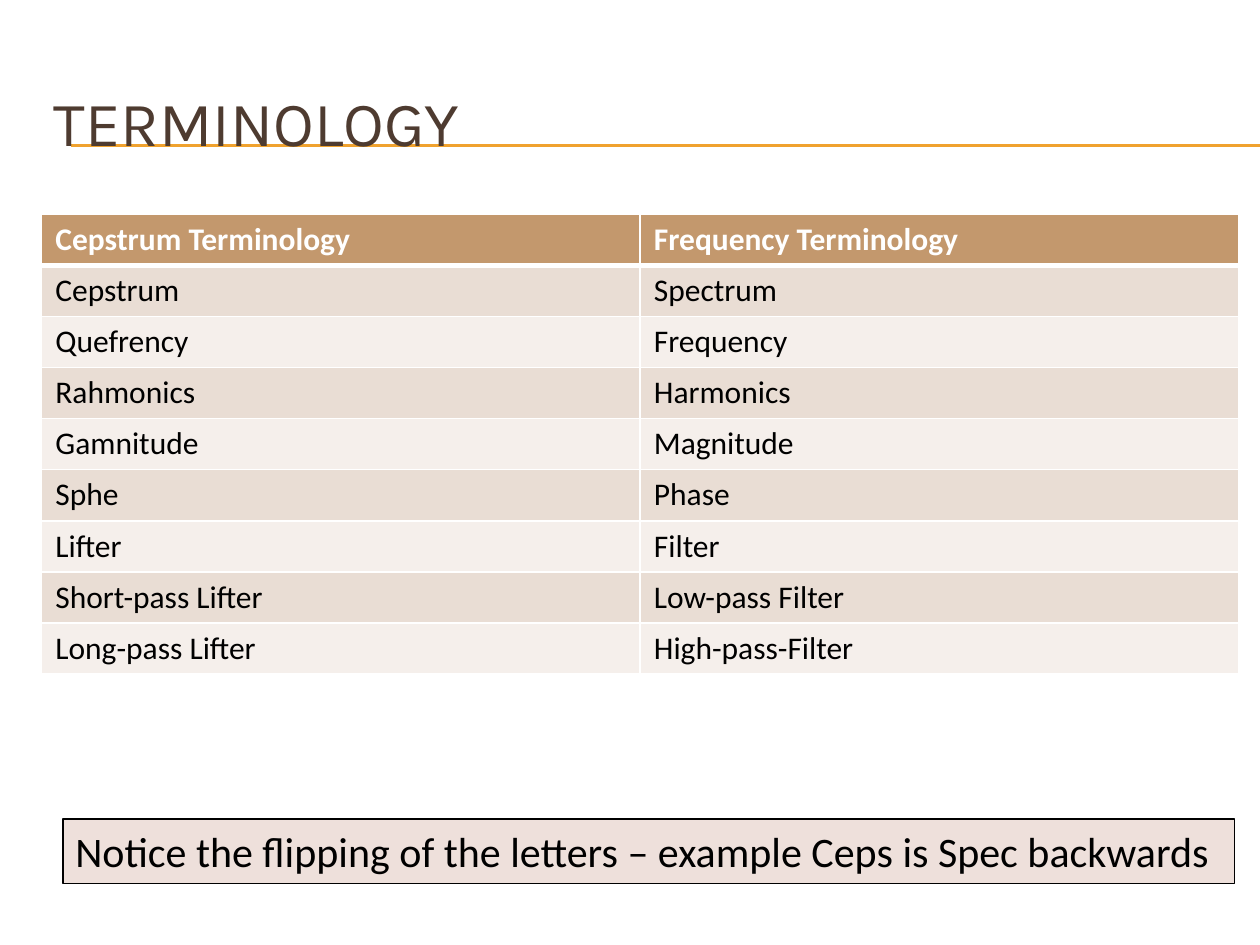
from lxml.etree import SubElement
from pptx import Presentation
from pptx.dml.color import RGBColor
from pptx.enum.shapes import MSO_CONNECTOR, MSO_SHAPE
from pptx.enum.text import MSO_ANCHOR, MSO_AUTO_SIZE, PP_ALIGN
from pptx.oxml.ns import qn
from pptx.util import Inches, Pt

WHITE = RGBColor(0xFF, 0xFF, 0xFF)
BLACK = RGBColor(0x00, 0x00, 0x00)
BROWN = RGBColor(0x4E, 0x3B, 0x30)
GOLD = RGBColor(0xF0, 0xA2, 0x2E)
HEADER_FILL = RGBColor(0xC3, 0x98, 0x6D)
BAND_FILLS = (RGBColor(0xF5, 0xEF, 0xEB), RGBColor(0xE9, 0xDD, 0xD4))
NOTE_FILL = RGBColor(0xEE, 0xE0, 0xDB)

TERMS = [
    ("Cepstrum Terminology", "Frequency Terminology"),
    ("Cepstrum", "Spectrum"),
    ("Quefrency", "Frequency"),
    ("Rahmonics", "Harmonics"),
    ("Gamnitude", "Magnitude"),
    ("Sphe", "Phase"),
    ("Lifter", "Filter"),
    ("Short-pass Lifter", "Low-pass Filter"),
    ("Long-pass Lifter", "High-pass-Filter"),
]


def add_text(text_frame, text, size, color, font_name="Calibri", bold=False):
    paragraph = text_frame.paragraphs[0]
    paragraph.alignment = PP_ALIGN.LEFT
    run = paragraph.add_run()
    run.text = text
    run.font.name = font_name
    run.font.size = Pt(size)
    run.font.bold = bold
    run.font.color.rgb = color


def add_rule(slide, left, right, top):
    rule = slide.shapes.add_connector(
        MSO_CONNECTOR.STRAIGHT, Inches(left), Inches(top), Inches(right), Inches(top))
    rule.line.color.rgb = GOLD
    rule.line.width = Pt(0.75)
    SubElement(rule._element.spPr, qn("a:effectLst"))


def add_title(slide, left, top, width, height):
    for rule_top in (1.15, 1.16):
        add_rule(slide, 0.56, 10, rule_top)
    title = slide.shapes.add_textbox(
        Inches(left), Inches(top), Inches(width), Inches(height))
    title.text_frame.word_wrap = True
    title.text_frame.vertical_anchor = MSO_ANCHOR.MIDDLE
    add_text(title.text_frame, "TERMINOLOGY", 36, BROWN, "Karla")


def set_borders(cell, bottom_width):
    properties = cell._tc.get_or_add_tcPr()
    widths = {"a:lnL": 1, "a:lnR": 1, "a:lnT": 1, "a:lnB": bottom_width}
    for position, (tag, width) in enumerate(widths.items()):
        border = properties.makeelement(qn(tag), {"w": str(Pt(width))})
        fill = SubElement(border, qn("a:solidFill"))
        SubElement(fill, qn("a:srgbClr"), val=str(WHITE))
        properties.insert(position, border)


def add_terms_table(slide, left, top, width, height):
    table = slide.shapes.add_table(
        len(TERMS), len(TERMS[0]),
        Inches(left), Inches(top), Inches(width), Inches(height)).table
    for row_index, terms in enumerate(TERMS):
        is_header = row_index == 0
        for column_index, term in enumerate(terms):
            cell = table.cell(row_index, column_index)
            cell.margin_left = cell.margin_right = Inches(0.11)
            cell.margin_top = cell.margin_bottom = Inches(0.05)
            cell.fill.solid()
            cell.fill.fore_color.rgb = HEADER_FILL if is_header else BAND_FILLS[row_index % 2]
            set_borders(cell, 3 if is_header else 1)
            add_text(cell.text_frame, term, 18, WHITE if is_header else BLACK, bold=is_header)


def add_note(slide, left, top, width, height):
    note = slide.shapes.add_shape(
        MSO_SHAPE.RECTANGLE, Inches(left), Inches(top), Inches(width), Inches(height))
    note.shadow.inherit = False
    note.fill.solid()
    note.fill.fore_color.rgb = NOTE_FILL
    note.line.color.rgb = BLACK
    note.line.width = Pt(0.75)
    note.text_frame.word_wrap = True
    note.text_frame.auto_size = MSO_AUTO_SIZE.SHAPE_TO_FIT_TEXT
    note.text_frame.vertical_anchor = MSO_ANCHOR.TOP
    add_text(note.text_frame,
             "Notice the flipping of the letters – example Ceps is Spec backwards", 24, BLACK)


def main():
    presentation = Presentation()
    presentation.slide_width = Inches(10)
    presentation.slide_height = Inches(7.5)
    slide = presentation.slides.add_slide(presentation.slide_layouts[6])
    add_title(slide, 0.33, 0.5, 9.5, 0.92)
    add_terms_table(slide, 0.33, 1.7, 9.5, 3.65)
    add_note(slide, 0.5, 6.5, 9.3, 0.51)
    presentation.save("out.pptx")


if __name__ == "__main__":
    main()
